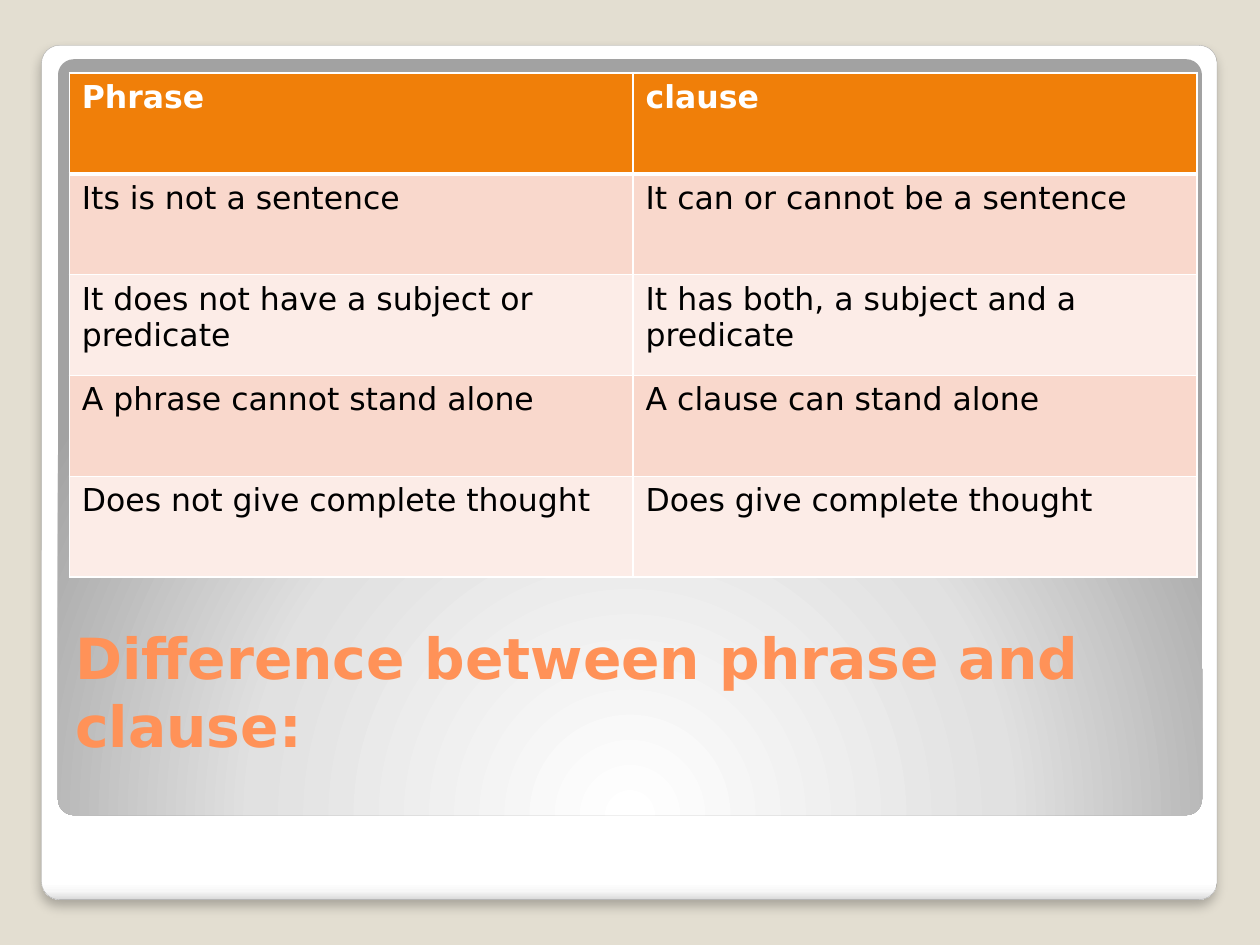
from dataclasses import dataclass

from lxml import etree
from pptx import Presentation
from pptx.dml.color import RGBColor
from pptx.enum.shapes import MSO_SHAPE as Shape
from pptx.enum.text import MSO_ANCHOR as Anchor
from pptx.oxml import parse_xml
from pptx.oxml.ns import nsdecls, qn
from pptx.util import Inches, Pt


@dataclass(frozen=True)
class Theme:
    font: str = "DejaVu Sans"
    title_size: float = 32.4
    cell_size: float = 18
    backdrop: str = "E3DED1"
    frame_line: str = "A4A4A4"
    shadow: str = "000000"
    title: str = "FF9258"
    header: str = "F07F09"
    header_text: str = "FFFFFF"
    body_text: str = "000000"
    bands: tuple = ("F9D8CC", "FCECE7")
    border: str = "FFFFFF"
    frame_stops: tuple = ((0, "FFFFFF"), (98, "FFFFFF"), (99, "F7F7F7"), (100, "DADADA"))
    panel_stops: tuple = ((0, "FFFFFF"), (55, "E1E1E1"), (100, "A2A2A2"))


THEME = Theme()
CORNER = 0.021
DOWNWARD = '<a:lin ang="5400000" scaled="0"/>'
RADIAL = ('<a:path path="circle">'
          '<a:fillToRect l="50000" t="175000" r="50000" b="-75000"/></a:path>')

COMPARISON = [
    ("Phrase", "clause"),
    ("Its is not a sentence", "It can or cannot be a sentence"),
    ("It does not have a subject or predicate", "It has both, a subject and a predicate"),
    ("A phrase cannot stand alone", "A clause can stand alone"),
    ("Does not give complete thought", "Does give complete thought"),
]


def color(value):
    return RGBColor.from_string(value)


def style_text(paragraph, size, text_color, bold):
    font = paragraph.font
    font.name, font.size, font.bold = THEME.font, Pt(size), bold
    font.color.rgb = color(text_color)


def add_rounded_box(slide, box, stops, direction):
    rounded = slide.shapes.add_shape(Shape.ROUNDED_RECTANGLE, *map(Inches, box))
    rounded.adjustments[0] = CORNER
    rounded.shadow.inherit = False
    rounded.line.fill.background()
    rounded.fill.background()
    stop_xml = "".join(
        f'<a:gs pos="{position * 1000}"><a:srgbClr val="{value}"/></a:gs>'
        for position, value in stops)
    gradient = parse_xml(f'<a:gradFill {nsdecls("a")} rotWithShape="1">'
                         f'<a:gsLst>{stop_xml}</a:gsLst>{direction}</a:gradFill>')
    properties = rounded._element.spPr
    properties.replace(properties.find(qn("a:noFill")), gradient)
    return rounded


def add_frame(slide, box):
    """White card with a soft shadow, and the grey panel inside it."""
    left, top, width, height = box
    card = add_rounded_box(slide, box, THEME.frame_stops, DOWNWARD)
    card.line.color.rgb = color(THEME.frame_line)
    card.line.width = Pt(0.16)
    effects = card._element.spPr.find(qn("a:effectLst"))
    effects.append(parse_xml(
        f'<a:outerShdw {nsdecls("a")} blurRad="{Pt(6)}" dist="{Pt(4)}" dir="5400000" '
        f'algn="t" rotWithShape="0"><a:srgbClr val="{THEME.shadow}">'
        '<a:alpha val="25000"/></a:srgbClr></a:outerShdw>'))
    panel_box = (left + 0.13, top + 0.11, width - 0.25, height - 0.78)
    add_rounded_box(slide, panel_box, THEME.panel_stops, RADIAL)


def add_title(slide, box, text):
    title_frame = slide.shapes.add_textbox(*map(Inches, box)).text_frame
    title_frame.word_wrap = True
    title_frame.vertical_anchor = Anchor.BOTTOM
    heading = title_frame.paragraphs[0]
    heading.text = text
    style_text(heading, THEME.title_size, THEME.title, True)


def set_borders(cell, bottom_width):
    properties = cell._tc.get_or_add_tcPr()
    widths = {"lnL": 1, "lnR": 1, "lnT": 1, "lnB": bottom_width}
    for index, (side, width) in enumerate(widths.items()):
        border = etree.Element(qn(f"a:{side}"), w=str(Pt(width)))
        fill = etree.SubElement(border, qn("a:solidFill"))
        etree.SubElement(fill, qn("a:srgbClr"), val=THEME.border)
        properties.insert(index, border)


def add_comparison(slide, box, rows):
    left, top, width, height = map(Inches, box)
    table = slide.shapes.add_table(
        len(rows), len(rows[0]), left, top, width, height).table
    for r, row in enumerate(rows):
        is_header = r == 0
        fill = THEME.header if is_header else THEME.bands[(r - 1) % 2]
        text_color = THEME.header_text if is_header else THEME.body_text
        for c, text in enumerate(row):
            cell = table.cell(r, c)
            cell.text = text
            cell.fill.solid()
            cell.fill.fore_color.rgb = color(fill)
            style_text(cell.text_frame.paragraphs[0], THEME.cell_size, text_color, is_header)
            set_borders(cell, 3 if is_header else 1)


def main():
    deck = Presentation()
    deck.slide_width, deck.slide_height = Inches(10), Inches(7.5)
    slide = deck.slides.add_slide(deck.slide_layouts[6])

    # Backdrop and card
    slide.background.fill.solid()
    slide.background.fill.fore_color.rgb = color(THEME.backdrop)
    add_frame(slide, (0.33, 0.36, 9.33, 6.78))

    # Title below the comparison table
    add_title(slide, (0.5, 4.92, 8.95, 1.15), "Difference between phrase and clause:")
    add_comparison(slide, (0.55, 0.58, 8.95, 4), COMPARISON)

    deck.save("out.pptx")


if __name__ == "__main__":
    main()
